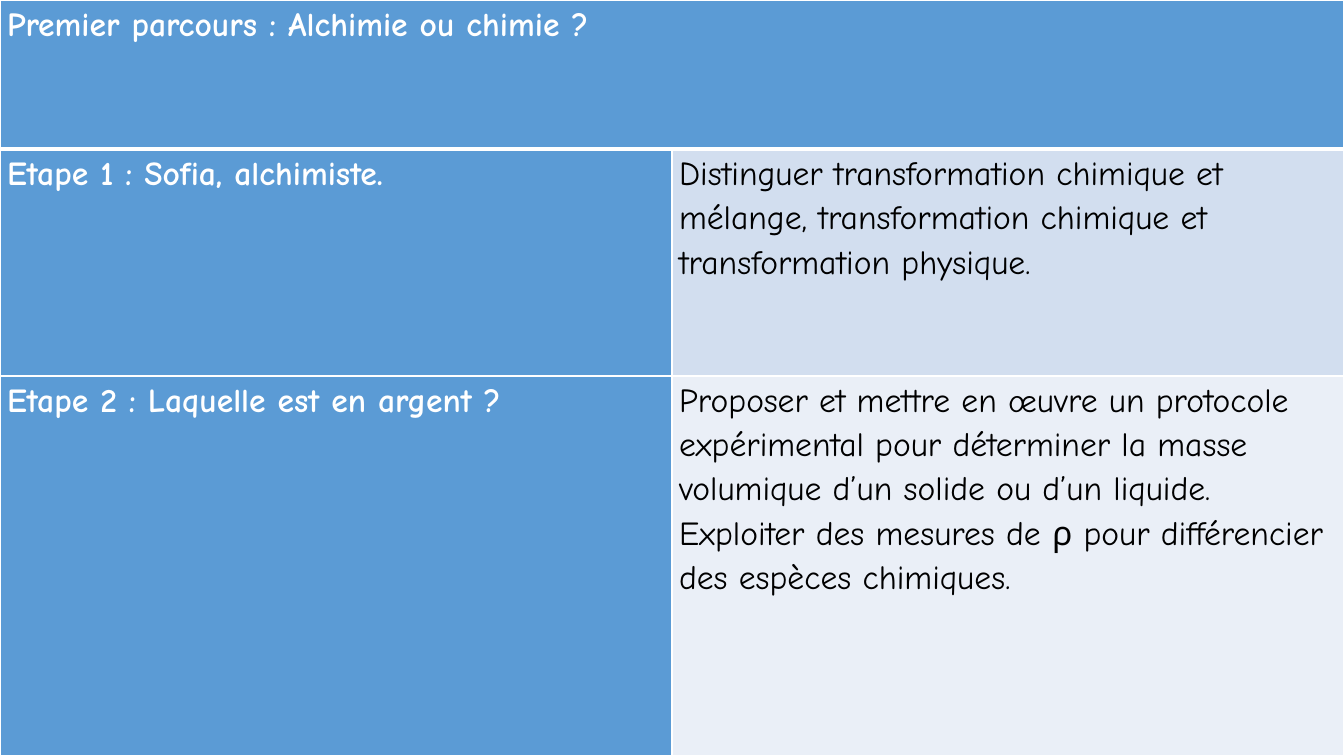
import dataclasses

import pptx
import pptx.dml.color
import pptx.oxml.ns
import pptx.util
from lxml import etree

Inches = pptx.util.Inches
Pt = pptx.util.Pt


@dataclasses.dataclass(frozen=True)
class Theme:
    font: str = "Comic Neue"
    size: float = 24
    space: float = 1.15
    white: str = "FFFFFF"
    black: str = "000000"
    blue: str = "5B9BD5"
    mid: str = "D2DEEF"
    pale: str = "EAEFF7"
    thin: float = 1
    thick: float = 3


@dataclasses.dataclass(frozen=True)
class Entry:
    row: int
    col: int
    fill: str
    lines: tuple[str, ...]
    head: bool = False


THEME = Theme()
WIDTH, HEIGHT = 13.33, 7.5
ROWS = (1.48, 2.25, 3.77)
COLS = 2

ENTRIES = (
    Entry(0, 0, THEME.blue, ("Premier parcours : Alchimie ou chimie ?",), True),
    Entry(1, 0, THEME.blue, ("Etape 1 : Sofia, alchimiste.",), True),
    Entry(1, 1, THEME.mid, (
        "Distinguer transformation chimique et mélange, "
        "transformation chimique et transformation physique.",
    )),
    Entry(2, 0, THEME.blue, ("Etape 2 : Laquelle est en argent ?",), True),
    Entry(2, 1, THEME.pale, (
        "Proposer et mettre en œuvre un protocole expérimental pour "
        "déterminer la masse volumique d’un solide ou d’un liquide.",
        "Exploiter des mesures de ρ pour différencier des espèces chimiques.",
    )),
)


def color(code: str) -> pptx.dml.color.RGBColor:
    return pptx.dml.color.RGBColor.from_string(code)


def add_edge(cell: pptx.table._Cell, side: str, width: float) -> None:
    qn = pptx.oxml.ns.qn
    props = cell._tc.get_or_add_tcPr()
    line = etree.SubElement(props, qn(f"a:ln{side}"), w=str(Pt(width)))
    fill = etree.SubElement(line, qn("a:solidFill"))
    etree.SubElement(fill, qn("a:srgbClr"), val=THEME.white)


def frame_cell(cell: pptx.table._Cell, row: int) -> None:
    # The heading row is set off by a thicker rule
    top = THEME.thick if row == 1 else THEME.thin
    base = THEME.thick if row == 0 else THEME.thin
    for side, width in (("L", THEME.thin), ("R", THEME.thin),
                        ("T", top), ("B", base)):
        add_edge(cell, side, width)


def fill_cell(cell: pptx.table._Cell, entry: Entry) -> None:
    cell.fill.solid()
    cell.fill.fore_color.rgb = color(entry.fill)
    cell.margin_left = cell.margin_right = Inches(0.07)
    cell.margin_top = cell.margin_bottom = 0
    frame = cell.text_frame
    for index, line in enumerate(entry.lines):
        para = frame.add_paragraph() if index else frame.paragraphs[0]
        para.line_spacing = THEME.space
        run = para.add_run()
        run.text = line
        run.font.name = THEME.font
        run.font.size = Pt(THEME.size)
        run.font.bold = entry.head
        run.font.color.rgb = color(THEME.white if entry.head else THEME.black)


def main() -> None:
    deck = pptx.Presentation()
    deck.slide_width, deck.slide_height = Inches(WIDTH), Inches(HEIGHT)
    slide = deck.slides.add_slide(deck.slide_layouts.get_by_name("Blank"))

    # Full-slide table
    table = slide.shapes.add_table(
        len(ROWS), COLS, 0, 0, Inches(WIDTH), Inches(HEIGHT)).table
    for row, height in zip(table.rows, ROWS):
        row.height = Inches(height)

    # Cell borders, then the merged heading
    for row in range(len(ROWS)):
        for col in range(COLS):
            frame_cell(table.cell(row, col), row)
    table.cell(0, 0).merge(table.cell(0, COLS - 1))

    # Cell contents
    for entry in ENTRIES:
        fill_cell(table.cell(entry.row, entry.col), entry)

    deck.save("out.pptx")


if __name__ == "__main__":
    main()
